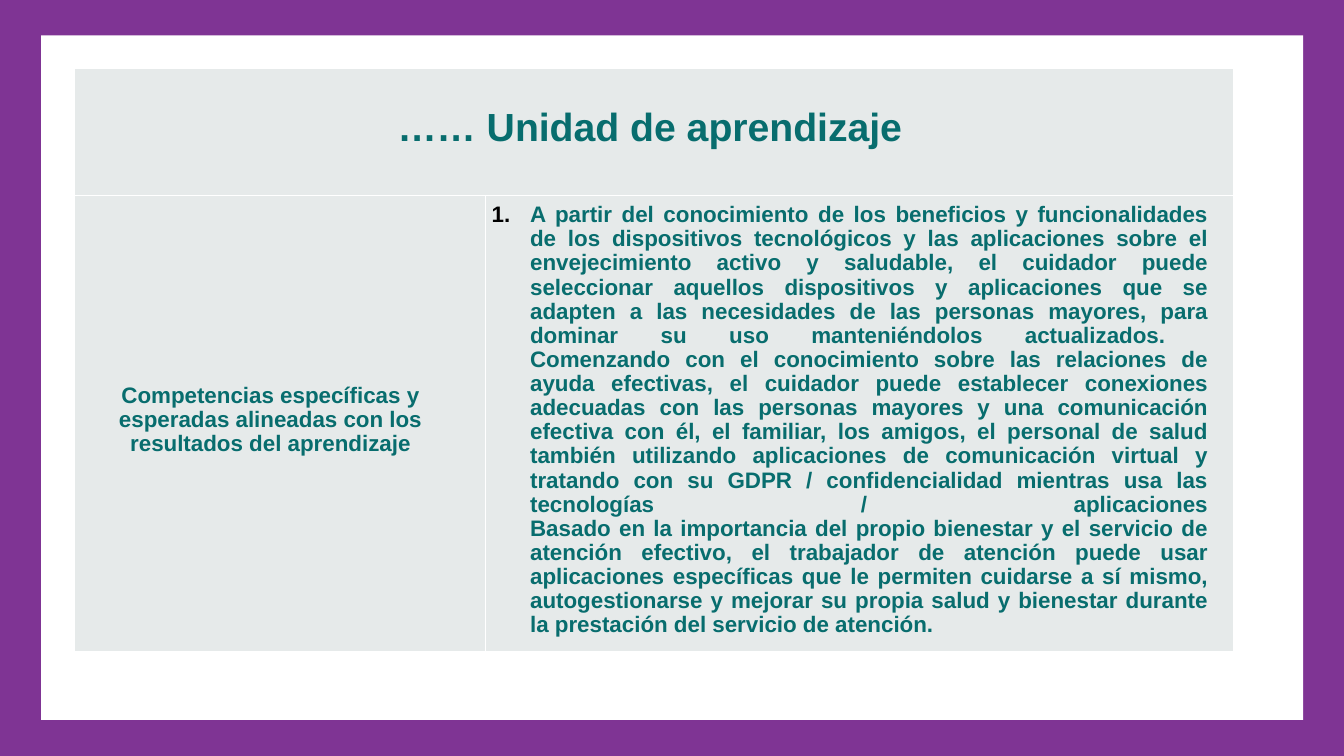
import copy
from dataclasses import dataclass

import lxml.etree
import pptx
import pptx.dml.color
import pptx.enum.shapes
import pptx.enum.text
import pptx.oxml
import pptx.oxml.ns
import pptx.util

Cm = pptx.util.Cm
Pt = pptx.util.Pt
RGBColor = pptx.dml.color.RGBColor
Align = pptx.enum.text.PP_ALIGN
qn = pptx.oxml.ns.qn

PURPLE = RGBColor(0x7F, 0x34, 0x94)
WHITE = RGBColor(0xFF, 0xFF, 0xFF)
TEAL = RGBColor(0x08, 0x6D, 0x6E)
GREY = RGBColor(0xE6, 0xEA, 0xEA)
BLACK = RGBColor(0, 0, 0)

SLIDE_W, SLIDE_H = Cm(33.87), Cm(19.05)
COLS = (Cm(10.36), Cm(18.85))
ROWS = (Cm(3.2), Cm(11.48))
INDENT = Cm(0.97)

COMPETENCES = "\v".join((
    "A partir del conocimiento de los beneficios y funcionalidades de los dispositivos "
    "tecnológicos y las aplicaciones sobre el envejecimiento activo y saludable, el cuidador "
    "puede seleccionar aquellos dispositivos y aplicaciones que se adapten a las necesidades "
    "de las personas mayores, para dominar su uso manteniéndolos actualizados. ",
    "Comenzando con el conocimiento sobre las relaciones de ayuda efectivas, el cuidador puede "
    "establecer conexiones adecuadas con las personas mayores y una comunicación efectiva con "
    "él, el familiar, los amigos, el personal de salud también utilizando aplicaciones de "
    "comunicación virtual y tratando con su GDPR / confidencialidad mientras usa las "
    "tecnologías / aplicaciones",
    "Basado en la importancia del propio bienestar y el servicio de atención efectivo, el "
    "trabajador de atención puede usar aplicaciones específicas que le permiten cuidarse a sí "
    "mismo, autogestionarse y mejorar su propia salud y bienestar durante la prestación del "
    "servicio de atención.",
))


@dataclass
class Panel:
    left: float
    top: float
    width: float
    height: float
    color: RGBColor


@dataclass
class CellText:
    row: int
    col: int
    text: str
    size: int
    align: Align
    numbered: bool = False


PANELS = (
    Panel(0, 0, 33.87, 19.05, PURPLE),
    Panel(1.04, 0.89, 31.8, 17.25, WHITE),
)
CELLS = (
    CellText(0, 0, " …… Unidad de aprendizaje", 28, Align.CENTER),
    CellText(1, 0, "Competencias específicas y esperadas alineadas con los resultados "
                   "del aprendizaje", 16, Align.CENTER),
    CellText(1, 1, COMPETENCES, 16, Align.JUSTIFY, numbered=True),
)


def draw_panel(s: pptx.slide.Slide, panel: Panel) -> None:
    sp = s.shapes.add_shape(pptx.enum.shapes.MSO_SHAPE.RECTANGLE, Cm(panel.left),
                            Cm(panel.top), Cm(panel.width), Cm(panel.height))
    sp.shadow.inherit = False
    sp.fill.solid()
    sp.fill.fore_color.rgb = panel.color
    sp.line.fill.background()


def add_color(parent: lxml.etree.ElementBase, color: RGBColor) -> None:
    lxml.etree.SubElement(parent, qn("a:srgbClr"), val=str(color))


def style_cell(cell: pptx.table._Cell) -> None:
    cell.fill.solid()
    cell.fill.fore_color.rgb = GREY
    margins = {"margin_left": Cm(0.15), "margin_right": Cm(0.64),
               "margin_top": Cm(0.03), "margin_bottom": Cm(0.18),
               "vertical_anchor": pptx.enum.text.MSO_ANCHOR.MIDDLE}
    for name, value in margins.items():
        setattr(cell, name, value)
    # Borders come before the fill in the cell properties
    tcPr = cell._tc.get_or_add_tcPr()
    for i, side in enumerate("LRTB"):
        ln = lxml.etree.Element(qn(f"a:ln{side}"), w=str(Pt(1)))
        add_color(lxml.etree.SubElement(ln, qn("a:solidFill")), WHITE)
        tcPr.insert(i, ln)


def number_paragraph(p: pptx.text.text._Paragraph) -> None:
    pPr = p._p.get_or_add_pPr()
    pPr.set("marL", str(INDENT))
    pPr.set("indent", str(-INDENT))
    add_color(lxml.etree.SubElement(pPr, qn("a:buClr")), BLACK)
    lxml.etree.SubElement(pPr, qn("a:buFont"), typeface="+mj-lt")
    lxml.etree.SubElement(pPr, qn("a:buAutoNum"), type="arabicPeriod")


def write_cell(tbl: pptx.table.Table, item: CellText) -> None:
    p = tbl.cell(item.row, item.col).text_frame.paragraphs[0]
    p.text = item.text
    p.alignment = item.align
    p.line_spacing = 0.97
    for r in p.runs:
        for name, value in {"name": "Arial", "size": Pt(item.size), "bold": True}.items():
            setattr(r.font, name, value)
        r.font.color.rgb = TEAL
    # Line breaks take the format of the text
    for br in p._p.findall(qn("a:br")):
        br.append(copy.deepcopy(p.runs[0]._r.rPr))
    if item.numbered:
        number_paragraph(p)


def main() -> None:
    prs = pptx.Presentation()
    prs.slide_width, prs.slide_height = SLIDE_W, SLIDE_H
    s = prs.slides.add_slide(prs.slide_layouts[6])

    # Purple frame
    for panel in PANELS:
        draw_panel(s, panel)

    # Learning unit table
    tbl = s.shapes.add_table(len(ROWS), len(COLS), Cm(1.88), Cm(1.73),
                             sum(COLS), sum(ROWS)).table
    tbl.first_row = tbl.horz_banding = False
    for column, width in zip(tbl.columns, COLS):
        column.width = width
    for row, height in zip(tbl.rows, ROWS):
        row.height = height
    for cell in tbl.iter_cells():
        style_cell(cell)
    tbl.cell(0, 0).merge(tbl.cell(0, 1))
    for item in CELLS:
        write_cell(tbl, item)

    prs.save("out.pptx")


if __name__ == "__main__":
    main()
